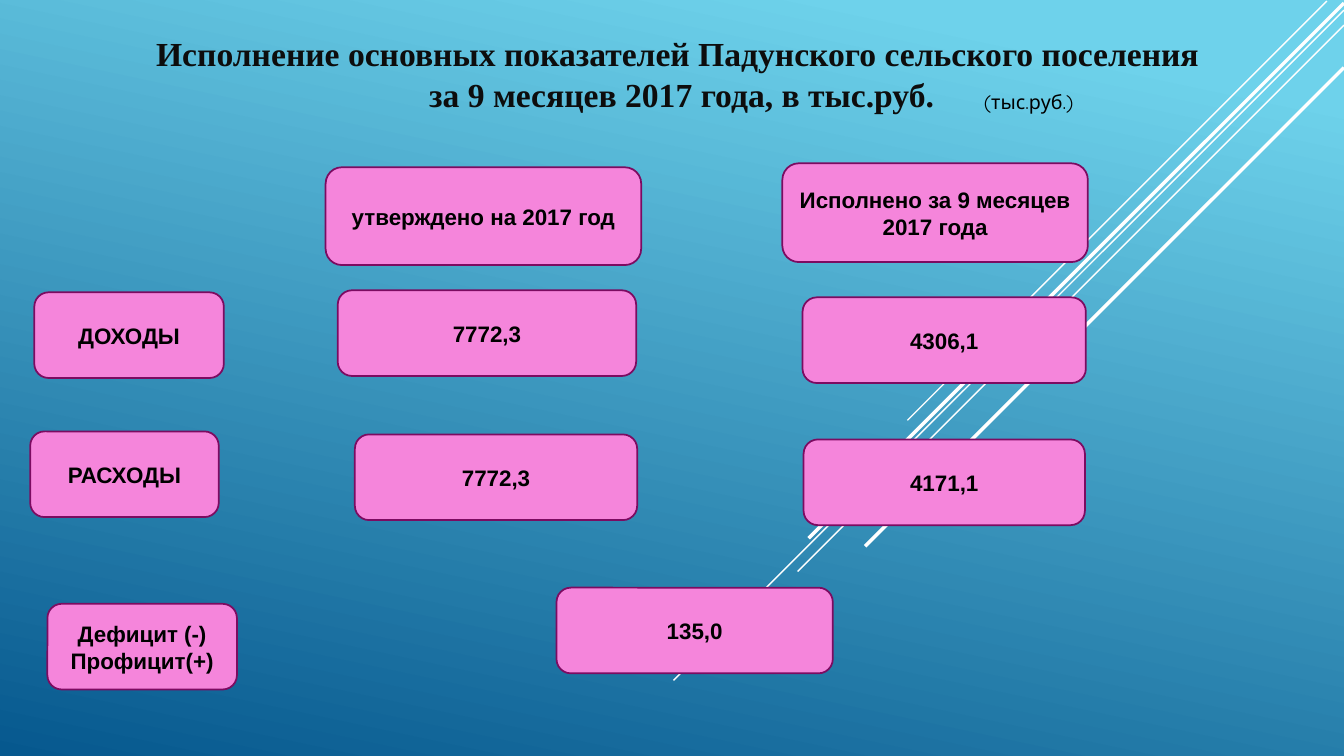
from pptx import Presentation
from pptx.dml.color import RGBColor
from pptx.enum import shapes, text
from pptx.oxml.ns import qn
from pptx.util import Inches, Pt
from lxml import etree

SKY = RGBColor(0x6E, 0xD2, 0xEB)
DEEP = RGBColor(0x06, 0x58, 0x8E)
WHITE = RGBColor(0xFF, 0xFF, 0xFF)
PINK = RGBColor(0xF5, 0x85, 0xDB)
PLUM = RGBColor(0x7C, 0x0B, 0x61)
INK = RGBColor(0x0D, 0x0D, 0x0D)
BLACK = RGBColor(0, 0, 0)

TITLE = ("Исполнение основных показателей Падунского сельского поселения\n"
         " за 9 месяцев 2017 года, в тыс.руб.")
UNIT = "(тыс.руб.)"

# Right end x, y; horizontal run (each ray falls at 45 degrees); weight
RAYS = [
    (13.16, 0.01, 4.16, 1),
    (13.33, 0.1, 6.65, 1),
    (13.33, 0.25, 5.42, 1),
    (13.33, 0.03, 5.31, 2.5),
    (13.33, 0.67, 4.75, 2.5),
]

# Words, left, top, width, height
ROW = 0.85
CARDS = [
    ("ДОХОДЫ", 0.34, 2.9, 1.88, ROW),
    ("РАСХОДЫ", 0.3, 4.28, 1.87, ROW),
    ("Дефицит (-)\nПрофицит(+)", 0.47, 5.99, 1.88, ROW),
    ("утверждено на 2017 год", 3.23, 1.66, 3.13, 0.97),
    ("Исполнено за 9 месяцев 2017 года", 7.76, 1.62, 3.03, 0.98),
    ("7772,3", 3.35, 2.88, 2.96, ROW),
    ("4306,1", 7.96, 2.95, 2.81, ROW),
    ("7772,3", 3.52, 4.31, 2.8, ROW),
    ("4171,1", 7.97, 4.36, 2.79, ROW),
    ("135,0", 5.52, 5.83, 2.74, ROW),
]


def write(shape, words, font, size, color, bold=True,
          align=text.PP_ALIGN.CENTER, anchor=text.MSO_ANCHOR.MIDDLE):
    frame = shape.text_frame
    frame.text = words
    frame.word_wrap = True
    frame.auto_size = text.MSO_AUTO_SIZE.NONE
    frame.vertical_anchor = anchor
    for para in frame.paragraphs:
        para.alignment = align
        for run in para.runs:
            run.font.name = font
            run.font.size = Pt(size)
            run.font.bold = bold
            run.font.color.rgb = color


def paint(slide):
    """Fill the background with the slanted blue gradient."""
    fill = slide.background.fill
    fill.gradient()
    fill.gradient_angle = 360 - 102
    for stop, (color, place) in zip(fill.gradient_stops, [(SKY, 0.1), (DEEP, 1)]):
        stop.color.rgb = color
        stop.position = place


def add_ray(slide, x, y, run, weight):
    ray = slide.shapes.add_connector(
        shapes.MSO_CONNECTOR.STRAIGHT,
        Inches(x), Inches(y), Inches(x - run), Inches(y + run))
    ray.line.color.rgb = WHITE
    ray.line.width = Pt(weight)
    etree.SubElement(ray._element.spPr, qn("a:effectLst"))


def add_card(slide, words, *box):
    card = slide.shapes.add_shape(
        shapes.MSO_SHAPE.ROUNDED_RECTANGLE, *map(Inches, box))
    card.shadow.inherit = False
    card.fill.solid()
    card.fill.fore_color.rgb = PINK
    card.line.color.rgb = PLUM
    card.line.width = Pt(1.25)
    write(card, words, "Arial", 16, BLACK)


def main():
    deck = Presentation()
    deck.slide_width, deck.slide_height = Inches(13.33), Inches(7.5)
    slide = deck.slides.add_slide(deck.slide_layouts[5])
    paint(slide)
    for ray in RAYS:
        add_ray(slide, *ray)

    title = slide.shapes.title
    title.left, title.top = Inches(0.11), Inches(0.28)
    title.width, title.height = Inches(13.22), Inches(0.9)
    write(title, TITLE, "Times New Roman", 24, INK, anchor=text.MSO_ANCHOR.TOP)
    slide.shapes._spTree.append(title._element)  # in front of the rays

    unit = slide.shapes.add_textbox(*map(Inches, (9.66, 0.84, 1.18, 0.33)))
    write(unit, UNIT, "Quicksand", 14, BLACK, False,
          text.PP_ALIGN.LEFT, text.MSO_ANCHOR.TOP)

    for card in CARDS:
        add_card(slide, *card)
    deck.save("out.pptx")


if __name__ == "__main__":
    main()
